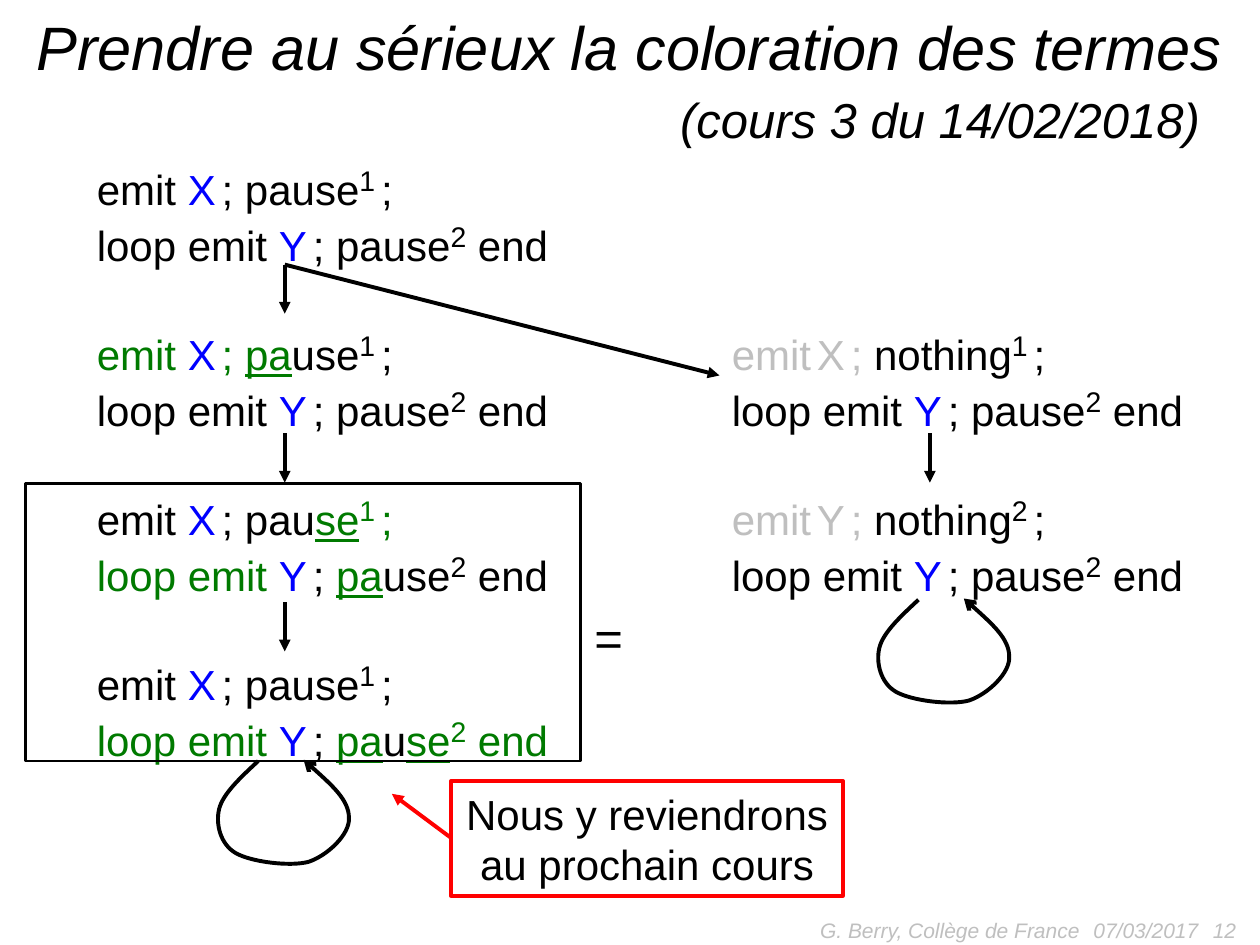
"""Build the slide on colouring terms in a synchronous program."""
import pptx
import pptx.util
import pptx.dml.color
import pptx.enum.shapes
import pptx.enum.text
import pptx.oxml.ns
from lxml import etree

Inches, Pt = pptx.util.Inches, pptx.util.Pt
ALIGN = pptx.enum.text.PP_ALIGN
ANCHOR = pptx.enum.text.MSO_ANCHOR
SHAPE = pptx.enum.shapes.MSO_SHAPE
qn = pptx.oxml.ns.qn

COLORS = {"k": "000000", "b": "0000FF", "g": "007A00", "a": "BFBFBF", "r": "FF0000"}
TITLE = "Prendre au sérieux la coloration des termes"
SUBTITLE = "(cours 3 du 14/02/2018)"
NOTE = ["Nous y reviendrons", "au prochain cours"]
FOOTERS = [
    ("07/03/2017", 8.58, 2.33, ALIGN.LEFT),
    (" 12", 7.58, 2.33, ALIGN.RIGHT),
    ("G. Berry, Collège de France", 5.5, 3.17, ALIGN.RIGHT),
]

GAP, GREY_GAP = (" ", "ks"), (" ", "as")
EMIT_X = [("emit ", "k"), ("X", "b"), GAP]
LOOP_Y = [("loop emit ", "k"), ("Y", "b"), GAP]
GREEN_LOOP_Y = [("loop emit ", "g"), ("Y", "b"), GAP]
END_1 = [("1", "k^"), GAP, (";", "k")]
END_2 = [("2", "k^"), (" end", "k")]
FIRST = EMIT_X + [("; pause", "k")] + END_1
LOOP = LOOP_Y + [("; pause", "k")] + END_2
LEFT_TERMS = [
    [FIRST, LOOP],
    [[("emit ", "g"), ("X", "b"), GAP, ("; ", "g"), ("pa", "gu"), ("use", "k")] + END_1, LOOP],
    [EMIT_X + [("; pau", "k"), ("se", "gu"), ("1", "g^"), (" ", "gs"), (";", "g")],
     GREEN_LOOP_Y + [("; ", "k"), ("pa", "gu"), ("use", "k")] + END_2],
    [FIRST, GREEN_LOOP_Y + [("; ", "k"), ("pa", "gu"), ("u", "k"), ("se", "gu"),
                            ("2", "g^"), (" end", "g")]],
]
RIGHT_TERMS = [
    [[("emit", "a"), GREY_GAP, (name, "a"), GREY_GAP, ("; ", "a"), ("nothing", "k"),
      (number, "k^"), GAP, (";", "k")], LOOP]
    for name, number in (("X", "1"), ("Y", "2"))
]
TERM_TOP, TERM_STEP = 1.23, 1.31
COLUMNS = [(0.67, 0, LEFT_TERMS), (5.71, 1, RIGHT_TERMS)]

ARROWS = [
    (2.26, 2.1, 2.26, 2.49, "k"),
    (7.38, 3.44, 7.38, 3.83, "k"),
    (2.26, 4.78, 2.26, 5.17, "k"),
    (2.26, 2.1, 5.71, 2.98, "k"),
    (2.26, 3.44, 2.26, 3.83, "k"),
    (3.58, 6.65, 3.11, 6.3, "r"),
]
LOOP_CURVE = [
    (0.32, 0.01), (0.18, 0.14), (0.04, 0.27), (0.01, 0.39),
    (-0.02, 0.51), (0.02, 0.67), (0.14, 0.74),
    (0.26, 0.81), (0.57, 0.85), (0.72, 0.81),
    (0.87, 0.76), (1.05, 0.59), (1.04, 0.46),
    (1.04, 0.32), (0.86, 0.16), (0.68, 0),
]
LOOP_ORIGINS = [(6.97, 4.75), (1.73, 6.03)]


def rgb(key):
    return pptx.dml.color.RGBColor.from_string(COLORS[key])


def style_font(font, size, color="k", italic=False):
    font.name, font.size, font.italic = "Arial", Pt(size), italic
    font.color.rgb = rgb(color)


def style_line(sp, color, width, head=None):
    sp.line.color.rgb = rgb(color)
    sp.line.width = Pt(width)
    if head:
        etree.SubElement(sp.line._get_or_add_ln(), qn("a:tailEnd"), type=head)


def add_text(slide, box, lines, size, color="k", italic=False, align=ALIGN.LEFT,
             anchor=ANCHOR.TOP, spacing=None):
    sp = slide.shapes.add_textbox(*map(Inches, box))
    fill_text(sp.text_frame, lines, size, color, italic, align, anchor, spacing)


def fill_text(tf, lines, size, color="k", italic=False, align=ALIGN.LEFT,
              anchor=ANCHOR.TOP, spacing=None):
    tf.word_wrap, tf.vertical_anchor = False, anchor
    for i, line in enumerate(lines):
        p = tf.add_paragraph() if i else tf.paragraphs[0]
        p.alignment = align
        if spacing:
            p.line_spacing = spacing
        style_font(p.font, size, color, italic)
        for text, style in [(line, color)] if isinstance(line, str) else line:
            r = p.add_run()
            r.text = text
            style_font(r.font, 28 if "^" in style else 12 if "s" in style else size,
                       style[0], italic)
            if "u" in style:
                r.font.underline = True
            if "^" in style:
                r.font._element.set("baseline", "30000")


def add_arrow(slide, x1, y1, x2, y2, color):
    sp = slide.shapes.add_connector(pptx.enum.shapes.MSO_CONNECTOR.STRAIGHT,
                                    *map(Inches, (x1, y1, x2, y2)))
    style_line(sp, color, 2.25, "triangle")
    etree.SubElement(sp._element.spPr, qn("a:effectLst"))


def add_loop(slide, x, y):
    points = [(Inches(x + dx), Inches(y + dy)) for dx, dy in LOOP_CURVE]
    builder = slide.shapes.build_freeform(*points[0])
    builder.add_line_segments(points[1:], close=False)
    sp = builder.convert_to_shape()
    segments = list(sp._element.iter(qn("a:lnTo")))
    outline = segments[0].getparent()
    for i in range(0, len(segments), 3):
        curve = etree.SubElement(outline, qn("a:cubicBezTo"))
        for segment in segments[i:i + 3]:
            curve.append(segment[0])
            outline.remove(segment)
    sp.fill.background()
    sp.shadow.inherit = False
    style_line(sp, "k", 2.25, "arrow")


def add_frame(slide, box, color, width):
    sp = slide.shapes.add_shape(SHAPE.RECTANGLE, *map(Inches, box))
    sp.fill.background()
    sp.shadow.inherit = False
    style_line(sp, color, width)
    return sp


def main():
    prs = pptx.Presentation()
    prs.slide_width, prs.slide_height = Inches(10), Inches(7.5)
    s = prs.slides.add_slide(prs.slide_layouts[5])
    for text, left, width, align in FOOTERS:
        add_text(s, (left, 7.18, width, 0.4), [text], 12, "a", True, align, ANCHOR.MIDDLE)
    title = s.shapes.title
    title.left, title.top, title.width, title.height = map(Inches, (0.12, 0.02, 9.75, 0.69))
    fill_text(title.text_frame, [TITLE], 35, italic=True, align=ALIGN.CENTER,
              anchor=ANCHOR.MIDDLE)
    title.text_frame.word_wrap = True
    for left, first_row, terms in COLUMNS:
        for row, lines in enumerate(terms, first_row):
            add_text(s, (left, TERM_TOP + row * TERM_STEP, 3.84, 0.87), lines, 24, spacing=0.95)
    for arrow in ARROWS:
        add_arrow(s, *arrow)
    for origin in LOOP_ORIGINS:
        add_loop(s, *origin)
    note = add_frame(s, (3.58, 6.2, 3.11, 0.91), "r", 2.25)
    fill_text(note.text_frame, NOTE, 24, align=ALIGN.CENTER, anchor=ANCHOR.MIDDLE)
    add_frame(s, (0.2, 3.84, 4.41, 2.2), "k", 1.5)
    add_text(s, (4.62, 4.75, 0.43, 0.56), ["="], 28, spacing=1.05)
    add_text(s, (5.3, 0.66, 4.38, 0.57), [SUBTITLE], 28, italic=True)
    prs.save("out.pptx")


if __name__ == "__main__":
    main()
